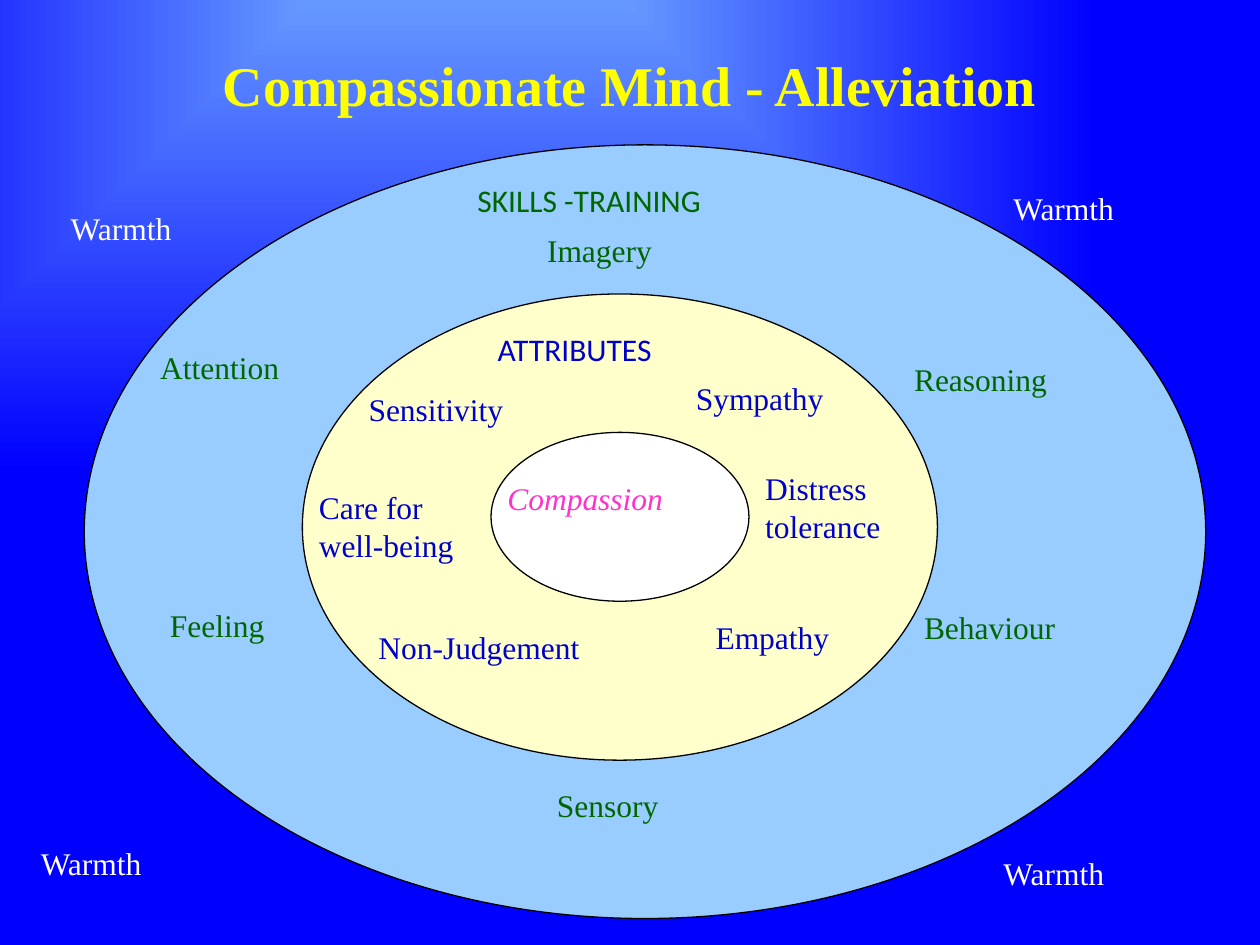
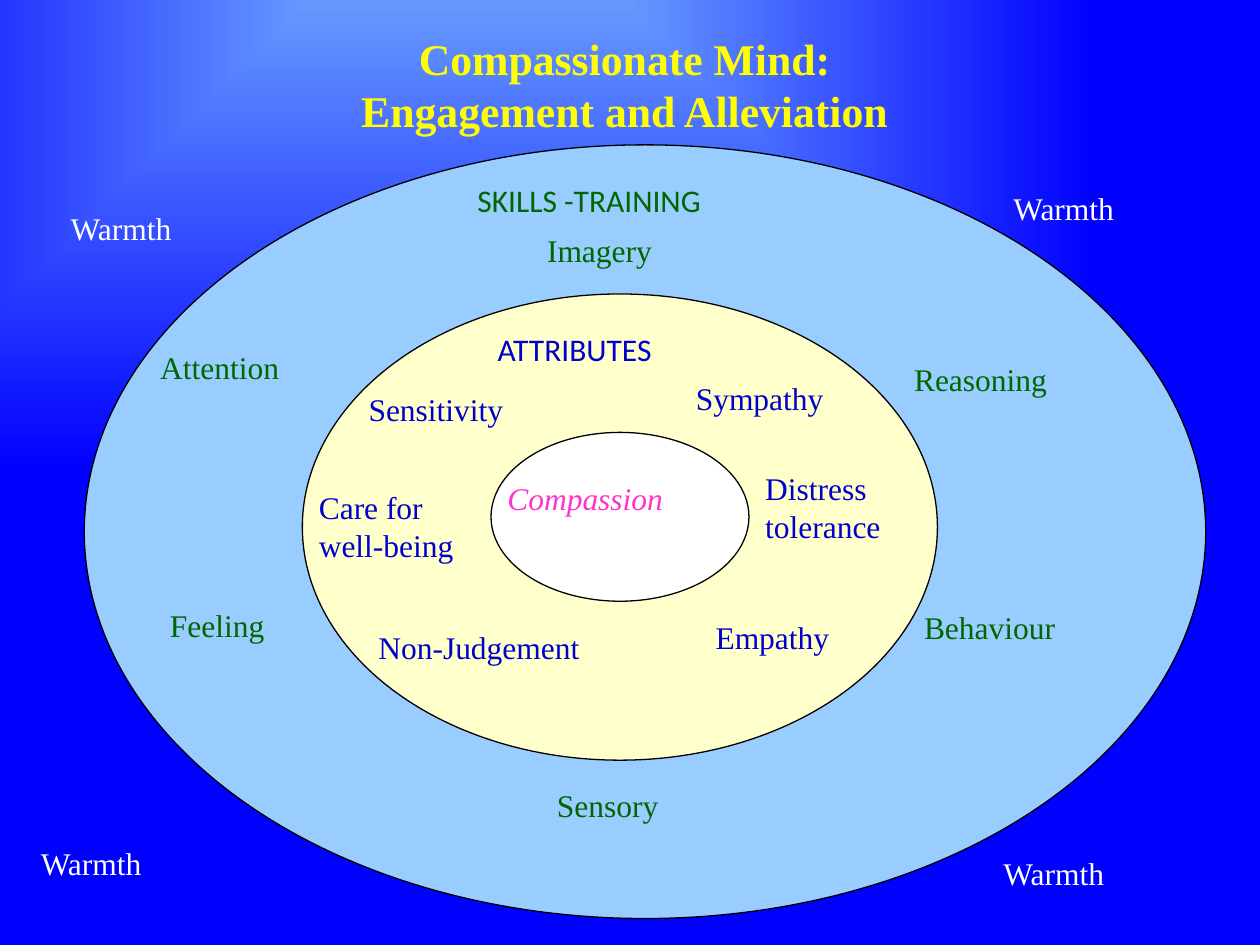
from dataclasses import dataclass

from pptx import Presentation
from pptx.dml.color import RGBColor
from pptx.enum.shapes import MSO_SHAPE
from pptx.enum.text import MSO_ANCHOR, PP_ALIGN
from pptx.oxml import parse_xml
from pptx.oxml.ns import nsdecls
from pptx.util import Pt

OVAL = MSO_SHAPE.OVAL
TOP, MIDDLE = MSO_ANCHOR.TOP, MSO_ANCHOR.MIDDLE
LEFT, CENTER = PP_ALIGN.LEFT, PP_ALIGN.CENTER

SERIF, SANS = "Times New Roman", "Calibri"
GLOW, BLUE = "6699FF", "0000FF"
YELLOW, WHITE, BLACK = "FFFF00", "FFFFFF", "000000"
SKY, CREAM = "99CCFF", "FFFFCC"
GREEN, NAVY, PINK = "006600", "0000CC", "FF33CC"

ONE_LINE, TWO_LINES = 27.4, 48.2


@dataclass(frozen=True)
class Label:
    text: str
    left: float
    top: float
    width: float
    height: float = ONE_LINE
    font: str = SERIF
    italic: bool = False


@dataclass(frozen=True)
class Ring:
    left: float
    top: float
    width: float
    height: float
    fill: str
    label_color: str
    labels: tuple[Label, ...]


@dataclass(frozen=True)
class Heading:
    lines: tuple[str, ...]
    size: float


# Rings from the outside in, each with the words that lie on it
RINGS = (
    Ring(48.2, 82.8, 640.8, 442.1, SKY, GREEN, (
        Label("SKILLS -TRAINING", 269.2, 100.1, 215.3, font=SANS),
        Label("Imagery", 309, 128.2, 130.3),
        Label("Attention", 88, 195.5, 141.8),
        Label("Reasoning", 518.7, 202.3, 130.3),
        Label("Feeling", 93.5, 342.7, 113),
        Label("Behaviour", 524.4, 343.8, 130.3),
        Label("Sensory", 314.7, 445.7, 108),
    )),
    Ring(172.8, 168, 362.9, 266.4, CREAM, NAVY, (
        Label("ATTRIBUTES", 280.7, 185, 164.2, font=SANS),
        Label("Care for well-being", 178.6, 275.5, 96.5, TWO_LINES),
        Label("Sensitivity", 207, 219.2, 108),
        Label("Sympathy", 394, 213.1, 118.8),
        Label("Distress tolerance", 433.7, 264.6, 96.5, TWO_LINES),
        Label("Empathy", 405.3, 349.5, 102.2),
        Label("Non-Judgement", 212.6, 355.3, 152.6),
    )),
    Ring(280.6, 247.1, 147.4, 96.5, WHITE, PINK, (
        Label("Compassion", 286.3, 270, 147.6, italic=True),
    )),
)

# Warmth surrounds the rings at the four corners
WARMTH = tuple(Label("Warmth", *place) for place in (
    (36.8, 115.9, 118.8),
    (19.7, 478.8, 113.8),
    (575.5, 104.7, 113),
    (569.8, 484.6, 150.2),
))

HEADINGS = (
    Heading(("Compassionate Mind - Alleviation",), 32),
    Heading(("Compassionate Mind: ", "Engagement and Alleviation "), 25),
)


def rgb(color: str) -> RGBColor:
    return RGBColor.from_string(color)


def set_background(master) -> None:
    """Give every slide the glow that spreads from the top edge."""
    content = master.element.cSld
    if content.bg is not None:
        content.remove(content.bg)
    content.insert(0, parse_xml(
        f'<p:bg {nsdecls("p", "a")}><p:bgPr><a:gradFill rotWithShape="0"><a:gsLst>'
        f'<a:gs pos="0"><a:srgbClr val="{GLOW}"/></a:gs>'
        f'<a:gs pos="100000"><a:srgbClr val="{BLUE}"/></a:gs></a:gsLst>'
        '<a:path path="rect"><a:fillToRect l="37500" t="-20000" r="62500" b="120000"/>'
        '</a:path></a:gradFill><a:effectLst/></p:bgPr></p:bg>'))


def write_text(frame, lines: tuple[str, ...], *, color: str, size: float = 18,
               font: str = SERIF, bold: bool = False, italic: bool = False, align=LEFT,
               anchor=TOP, inset: float = 3.6, before: float = 0) -> None:
    frame.word_wrap = True
    frame.vertical_anchor = anchor
    frame.margin_left = frame.margin_right = Pt(inset)
    frame.margin_top = frame.margin_bottom = Pt(inset)
    paragraph = frame.paragraphs[0]
    paragraph.alignment = align
    paragraph.space_before = Pt(before)
    for number, line in enumerate(lines):
        if number:
            paragraph.add_line_break()
        run = paragraph.add_run()
        run.text = line
        run.font.name, run.font.size = font, Pt(size)
        run.font.bold, run.font.italic = bold, italic
        run.font.color.rgb = rgb(color)


def add_label(slide, label: Label, color: str) -> None:
    """Write a word in an unfilled outline."""
    left, top = Pt(label.left), Pt(label.top)
    right, bottom = left + Pt(label.width), top + Pt(label.height)
    builder = slide.shapes.build_freeform(left, top)
    builder.add_line_segments([(right, top), (right, bottom), (left, bottom)])
    outline = builder.convert_to_shape()
    outline.shadow.inherit = False
    outline.fill.background()
    outline.line.fill.background()
    write_text(outline.text_frame, (label.text,), color=color, font=label.font,
               italic=label.italic, before=10)


def add_ring(slide, ring: Ring) -> None:
    oval = slide.shapes.add_shape(OVAL, Pt(ring.left), Pt(ring.top),
                                  Pt(ring.width), Pt(ring.height))
    oval.shadow.inherit = False
    oval.fill.solid()
    oval.fill.fore_color.rgb = rgb(ring.fill)
    oval.line.color.rgb = rgb(BLACK)
    oval.line.width = Pt(0.75)
    for label in ring.labels:
        add_label(slide, label, ring.label_color)


def add_mind_slide(prs, heading: Heading) -> None:
    slide = prs.slides.add_slide(prs.slide_layouts[6])
    title = slide.shapes.add_textbox(Pt(54), Pt(15), Pt(612), Pt(66.2))
    write_text(title.text_frame, heading.lines, color=YELLOW, size=heading.size,
               bold=True, align=CENTER, anchor=MIDDLE, inset=0)
    for ring in RINGS:
        add_ring(slide, ring)
    for label in WARMTH:
        add_label(slide, label, WHITE)


def main() -> None:
    prs = Presentation()
    prs.slide_width, prs.slide_height = Pt(720), Pt(540)
    set_background(prs.slide_master)
    for heading in HEADINGS:
        add_mind_slide(prs, heading)
    prs.save("out.pptx")


if __name__ == "__main__":
    main()
